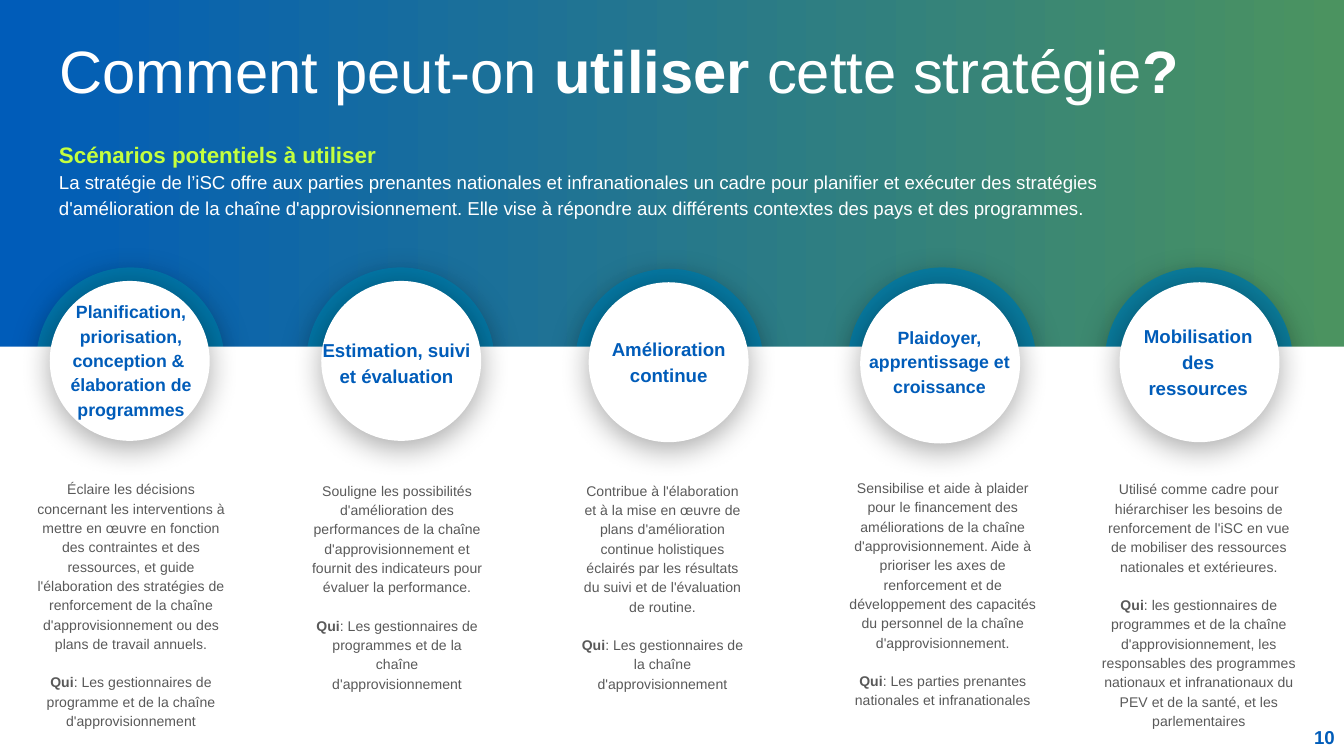
from lxml import etree
from pptx import Presentation
from pptx.dml.color import RGBColor
from pptx.enum import shapes as sh, text as tx
from pptx.oxml import parse_xml
from pptx.oxml.ns import qn
from pptx.util import Inches, Pt

NS = "http://schemas.openxmlformats.org/drawingml/2006/main"
BLUE, WHITE, GREY, LIME, TEAL = "005CB9", "FFFFFF", "595959", "C4FF3E", "0079A7"
SHAPE = sh.MSO_SHAPE
LEFT, CENTER, RIGHT = tx.PP_ALIGN.LEFT, tx.PP_ALIGN.CENTER, tx.PP_ALIGN.RIGHT
TOP, MIDDLE = tx.MSO_ANCHOR.TOP, tx.MSO_ANCHOR.MIDDLE

# back disk, front disk, label shape, label box, label size, label,
# note box, use, users
STEPS = [
    ((0.27, 1.99), (0.37, 2.09), SHAPE.PENTAGON, (0.3, 2.38, 1.35, 0.58), 9.5,
     "Planification, priorisation, conception & \vélaboration de programmes",
     (0.17, 3.51, 1.61, 1.81),
     "Éclaire les décisions concernant les interventions à mettre en œuvre en "
     "fonction des contraintes et des ressources, et guide l'élaboration des "
     "stratégies de renforcement de la chaîne d'approvisionnement ou des plans "
     "de travail annuels.",
     "Les gestionnaires de programme et de la chaîne d'approvisionnement"),
    ((2.28, 1.99), (2.39, 2.09), SHAPE.CHEVRON, (2.25, 2.4, 1.4, 0.58), 10,
     "Estimation, suivi et évaluation",
     (2.22, 3.52, 1.47, 1.81),
     "Souligne les possibilités d'amélioration des performances de la chaîne "
     "d'approvisionnement et fournit des indicateurs pour évaluer la performance.",
     "Les gestionnaires de programmes et de la chaîne d'approvisionnement"),
    ((4.28, 2), (4.38, 2.1), SHAPE.CHEVRON, (4.25, 2.39, 1.45, 0.58), 10,
     "Amélioration continue",
     (4.21, 3.52, 1.44, 1.81),
     "Contribue à l'élaboration et à la mise en œuvre de plans d'amélioration "
     "continue holistiques éclairés par les résultats du suivi et de "
     "l'évaluation de routine.",
     "Les gestionnaires de la chaîne d'approvisionnement"),
    ((6.31, 1.99), (6.4, 2.11), SHAPE.CHEVRON, (6.25, 2.39, 1.48, 0.58), 9.5,
     "Plaidoyer, apprentissage et croissance",
     (6.21, 3.5, 1.61, 1.81),
     "Sensibilise et aide à plaider pour le financement des améliorations de la "
     "chaîne d'approvisionnement. Aide à prioriser les axes de renforcement et "
     "de développement des capacités du personnel de la chaîne "
     "d'approvisionnement.",
     "Les parties prenantes nationales et infranationales"),
    ((8.22, 1.99), (8.33, 2.1), SHAPE.CHEVRON, (8.38, 2.39, 1.07, 0.58), 10,
     "Mobilisation des ressources",
     (8.08, 3.51, 1.68, 1.81),
     "Utilisé comme cadre pour hiérarchiser les besoins de renforcement de l'iSC "
     "en vue de mobiliser des ressources nationales et extérieures.",
     "les gestionnaires de programmes et de la chaîne d'approvisionnement, les "
     "responsables des programmes nationaux et infranationaux du PEV et de la "
     "santé, et les parlementaires"),
]


def color(code):
    return RGBColor.from_string(code)


def inches(box):
    return [Inches(v) for v in box]


def style(para, size, code, bold=None, align=LEFT, space=None):
    para.alignment = align
    para.line_spacing = space
    font = para.font
    font.name, font.size, font.bold = "Arial", Pt(size), bold
    font.color.rgb = color(code)


def set_frame(frame, anchor=TOP, pad=0.1):
    frame.word_wrap = True
    frame.auto_size = tx.MSO_AUTO_SIZE.NONE
    frame.vertical_anchor = anchor
    frame.margin_left = frame.margin_right = Inches(0.1)
    frame.margin_top = frame.margin_bottom = Inches(pad)


def add_runs(para, parts):
    """Add (words, bold) pairs to a paragraph."""
    for words, bold in parts:
        run = para.add_run()
        run.text = words
        run.font.bold = bold


def add_box(slide, box, anchor=TOP, pad=0.1):
    frame = slide.shapes.add_textbox(*inches(box)).text_frame
    set_frame(frame, anchor, pad)
    return frame


def add_plain(owner, kind, box, code=None):
    item = owner.shapes.add_shape(kind, *inches(box))
    item.shadow.inherit = False
    item.line.fill.background()
    if code:
        item.fill.solid()
        item.fill.fore_color.rgb = color(code)
    else:
        item.fill.background()
    return item


def add_disk(owner, place, size, code, alpha=None):
    disk = add_plain(owner, SHAPE.OVAL, (*place, size, size), code)
    props = disk._element.spPr
    if alpha:
        tone = props.find(qn("a:solidFill")).find(qn("a:srgbClr"))
        etree.SubElement(tone, qn("a:alpha")).set("val", str(alpha * 1000))
    props.find(qn("a:effectLst")).append(parse_xml(
        f'<a:outerShdw xmlns:a="{NS}" blurRad="{Pt(16)}" dist="{Pt(4)}" '
        'dir="5400000" algn="t" rotWithShape="0"><a:srgbClr val="000000">'
        '<a:alpha val="33000"/></a:srgbClr></a:outerShdw>'))


def add_badge(slide, place, kind, box, size, label):
    group = slide.shapes.add_group_shape()
    add_disk(group, place, 1.19, WHITE)
    tag = add_plain(group, kind, box)
    tag.adjustments[0] = 0
    set_frame(tag.text_frame, MIDDLE)
    tag.text_frame.text = label
    style(tag.text_frame.paragraphs[0], size, BLUE, True, CENTER, 1.15)


def add_note(slide, box, use, users):
    frame = add_box(slide, box, pad=0.05)
    frame.text = use
    who = frame.add_paragraph()
    add_runs(who, [("Qui", True), (": " + users, False)])
    for para in frame.paragraphs:
        style(para, 7.5, GREY, align=CENTER, space=1.15)
    who.space_before = Pt(10.3)


def add_title(slide):
    title = slide.shapes.title
    title.left, title.top, title.width, title.height = inches((0.34, 0.15, 9.32, 0.63))
    set_frame(title.text_frame)
    para = title.text_frame.paragraphs[0]
    add_runs(para, [("Comment peut-on ", False), ("utiliser", True),
                    (" cette stratégie", False), ("?", True)])
    style(para, 32, WHITE)


def add_intro(slide):
    frame = add_box(slide, (0.34, 0.91, 8.42, 0.65), pad=0.11)
    frame.text = "Scénarios potentiels à utiliser"
    style(frame.paragraphs[0], 12, LIME, True, space=1.15)
    body = frame.add_paragraph()
    body.text = (
        "La stratégie de l’iSC offre aux parties prenantes nationales et "
        "infranationales un cadre pour planifier et exécuter des stratégies "
        "d'amélioration de la chaîne d'approvisionnement. Elle vise à répondre "
        "aux différents contextes des pays et des programmes.")
    style(body, 10, WHITE, space=1.15)


def set_back(slide):
    fill = slide.background.fill
    fill.gradient()
    fill.gradient_angle = 0
    for stop, code, place in zip(fill.gradient_stops, (BLUE, "4B9360"), (0, 1)):
        stop.color.rgb = color(code)
        stop.position = place


def main():
    deck = Presentation()
    deck.slide_width = Inches(10)
    deck.slide_height = deck.slide_width * 9 // 16
    slide = deck.slides.add_slide(deck.slide_layouts[5])
    set_back(slide)
    add_title(slide)
    for step in reversed(STEPS):
        add_disk(slide, step[0], 1.4, TEAL, 81)
    add_plain(slide, SHAPE.RECTANGLE, (0, 2.58, 10, 3.05), WHITE)
    add_intro(slide)
    for step in STEPS:
        add_note(slide, *step[6:])
    for step in STEPS:
        add_badge(slide, *step[1:6])
    number = add_box(slide, (9.43, 5.27, 0.6, 0.43), MIDDLE)
    number.text = "10"
    style(number.paragraphs[0], 10, BLUE, True, RIGHT)
    deck.save("out.pptx")


if __name__ == "__main__":
    main()
